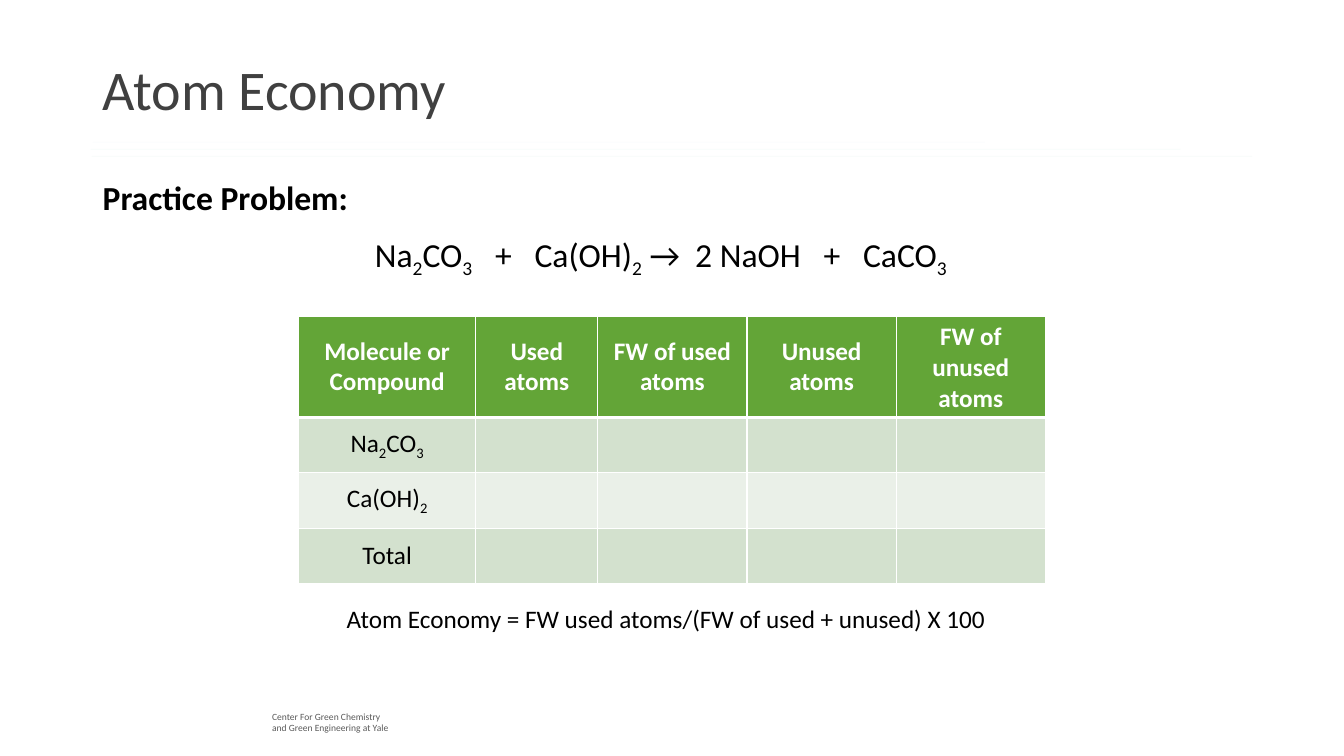
from dataclasses import dataclass

from lxml.etree import SubElement
from pptx import Presentation
from pptx.dml.color import RGBColor as RGB
from pptx.enum.shapes import MSO_CONNECTOR as CONN
from pptx.enum.text import MSO_ANCHOR as ANCHOR, PP_ALIGN as ALIGN
from pptx.oxml.ns import qn
from pptx.util import Inches, Pt


@dataclass(frozen=True)
class Theme:
    font: str = "Calibri"
    title: str = "404040"
    text: str = "000000"
    footer: str = "595959"
    white: str = "FFFFFF"
    header: str = "63A537"
    bands: tuple = ("D3E1CE", "EAF0E8")
    rules: tuple = ("4EB3CF", "44C1A3", "37A76F")
    title_size: float = 40
    large: float = 24
    body: float = 18
    small: float = 6.8


SUB = {"baseline": "-25000"}
WIDE = {"spc": "1080"}
NARROW = {"spc": "540"}
CARBONATE = [("Na", {}), ("2", SUB), ("CO", {}), ("3", SUB)]
HYDROXIDE = [("Ca(OH)", {}), ("2", SUB)]
PLUS = [(" ", WIDE), ("+", {}), (" ", WIDE)]
EQUATION = [*CARBONATE, *PLUS, *HYDROXIDE, (" →", {}), (" ", NARROW),
            ("2 NaOH", {}), *PLUS, ("CaCO", {}), ("3", SUB)]
HEADINGS = ["Molecule or Compound", "Used atoms", "FW of used atoms",
            "Unused atoms", "FW of unused atoms"]
ROW_LABELS = [CARBONATE, HYDROXIDE, [("Total", {})]]


class SlideBuilder:
    """Adds styled elements to one slide."""

    def __init__(self, slide, theme):
        self.s = slide
        self.theme = theme

    def add_runs(self, p, runs, size, color, bold=False):
        for text, attrs in runs:
            r = p.add_run()
            r.text = text
            style = {"name": self.theme.font, "size": Pt(size), "bold": bold}
            for key, value in style.items():
                setattr(r.font, key, value)
            r.font.color.rgb = RGB.from_string(color)
            for key, value in attrs.items():
                r._r.get_or_add_rPr().set(key, value)

    def text(self, box, lines, size, color, bold=False, anchor=ANCHOR.TOP, spacing=1.0):
        tf = self.s.shapes.add_textbox(*map(Inches, box)).text_frame
        tf.word_wrap = True
        tf.vertical_anchor = anchor
        for i, runs in enumerate(lines):
            p = tf.add_paragraph() if i else tf.paragraphs[0]
            p.line_spacing = spacing
            self.add_runs(p, runs, size, color, bold)

    def rule(self, left, right, y, color):
        sp = self.s.shapes.add_connector(
            CONN.STRAIGHT, *map(Inches, (left, y, right, y)))
        sp.line.width = Pt(0.5)
        sp.line.color.rgb = RGB.from_string(color)
        tint = sp._element.spPr.find(".//" + qn("a:srgbClr"))
        SubElement(tint, qn("a:alpha"), val="4000")
        SubElement(sp._element.spPr, qn("a:effectLst"))

    def cell(self, cell, runs, fill, color, bold, top, bottom):
        tcPr = cell._tc.get_or_add_tcPr()
        for side, width in (("L", 1), ("R", 1), ("T", top), ("B", bottom)):
            ln = SubElement(tcPr, qn("a:ln" + side), w=str(Pt(width)))
            solid = SubElement(ln, qn("a:solidFill"))
            SubElement(solid, qn("a:srgbClr"), val=self.theme.white)
        cell.fill.solid()
        cell.fill.fore_color.rgb = RGB.from_string(fill)
        cell.vertical_anchor = ANCHOR.MIDDLE
        p = cell.text_frame.paragraphs[0]
        p.alignment = ALIGN.CENTER
        self.add_runs(p, runs, self.theme.body, color, bold)

    def table(self, left, top, widths, heights, headings, labels):
        t = self.theme
        box = (left, top, sum(widths), sum(heights))
        table = self.s.shapes.add_table(
            len(heights), len(widths), *map(Inches, box)).table
        for column, width in zip(table.columns, widths):
            column.width = Inches(width)
        for row, height in zip(table.rows, heights):
            row.height = Inches(height)
        for col, heading in enumerate(headings):
            self.cell(table.cell(0, col), [(heading, {})], t.header, t.white, True, 1, 3)
            for row, label in enumerate(labels, 1):
                self.cell(table.cell(row, col), [] if col else label,
                          t.bands[(row - 1) % 2], t.text, False, 3 if row == 1 else 1, 1)


def main():
    prs = Presentation()
    prs.slide_width, prs.slide_height = Inches(13.33), Inches(7.5)
    t = Theme()
    b = SlideBuilder(prs.slides.add_slide(prs.slide_layouts[6]), t)
    b.text((2.6, 7, 1.86, 0.33),
           [[("Center For Green Chemistry", {})], [("and Green Engineering at Yale", {})]],
           t.small, t.footer)
    ends = ((0.92, 9.77), (0.9, 11.71), (0.91, 12.42))
    for i, ((left, right), color) in enumerate(zip(ends, t.rules)):
        b.rule(left, right, 1.41 + 0.07 * i, color)
    b.table(2.96, 3.14, (1.76, 1.21, 1.48, 1.48, 1.48), (0.98, 0.55, 0.55, 0.55),
            HEADINGS, ROW_LABELS)
    b.text((0.92, 1.71, 2.66, 0.5), [[("Practice Problem:", {})]], t.large, t.text, bold=True)
    b.text((0.92, 0.19, 11.5, 1.45), [[("Atom Economy", {})]], t.title_size, t.title,
           anchor=ANCHOR.MIDDLE, spacing=0.9)
    b.text((3.62, 2.27, 6.09, 0.5), [EQUATION], t.large, t.text)
    b.text((3.34, 5.94, 6.65, 0.4),
           [[("Atom Economy = FW used atoms/(FW of used + unused) X 100", {})]],
           t.body, t.text)
    prs.save("out.pptx")


if __name__ == "__main__":
    main()
